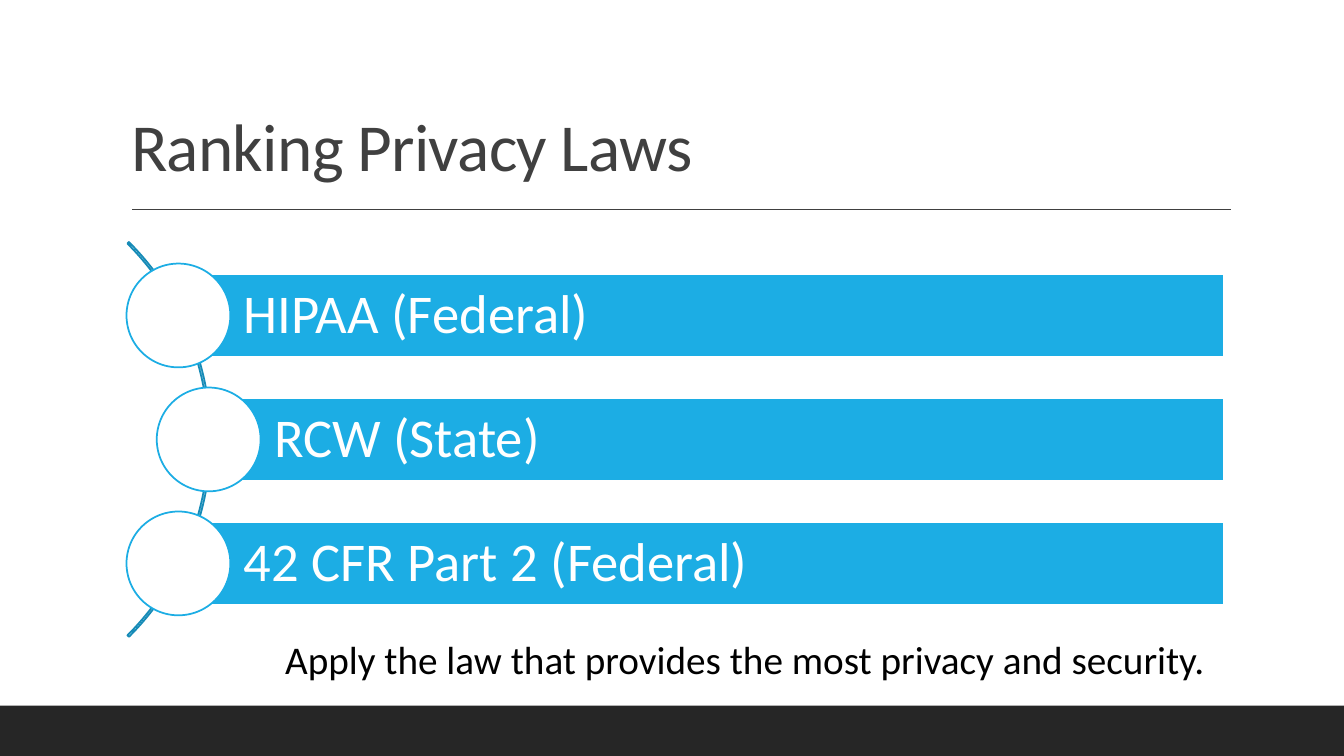
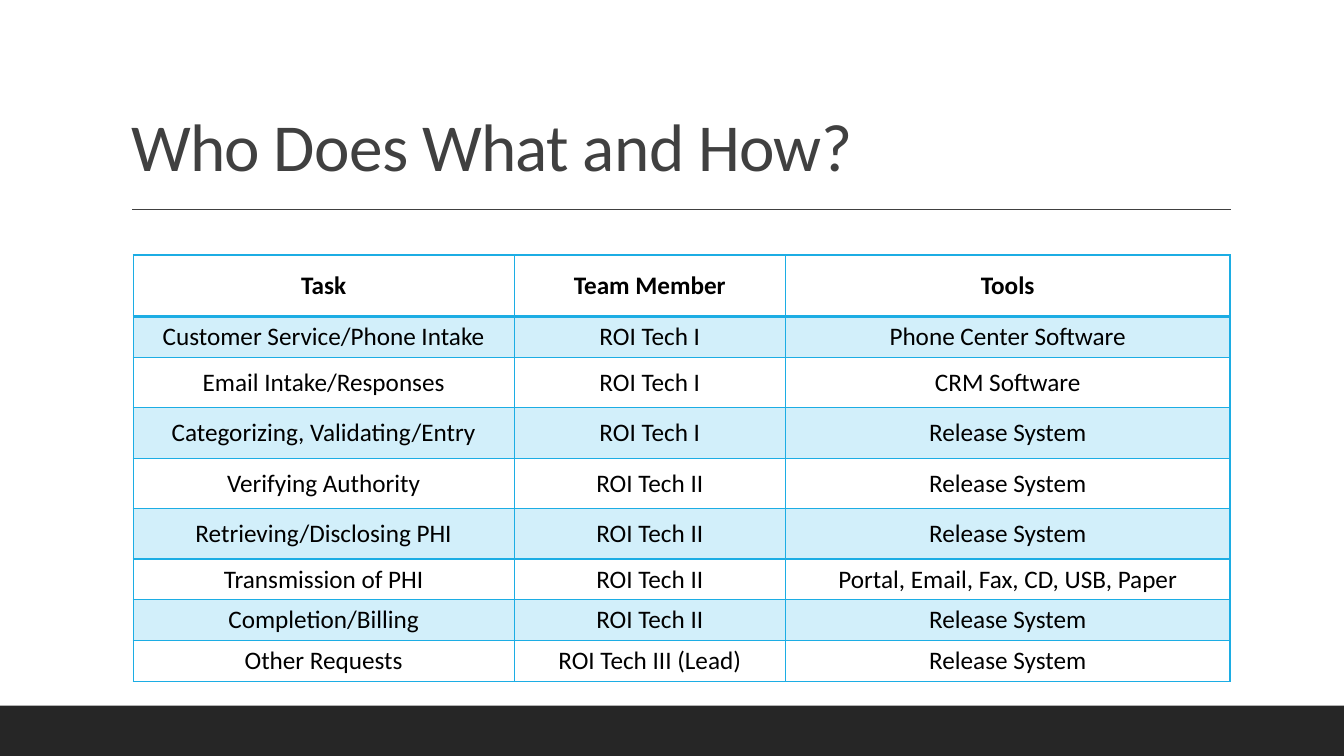
from lxml import etree
from pptx import Presentation
from pptx.dml.color import RGBColor
from pptx.enum.shapes import MSO_CONNECTOR, MSO_SHAPE
from pptx.enum.text import MSO_ANCHOR, MSO_AUTO_SIZE, PP_ALIGN
from pptx.oxml.ns import qn
from pptx.util import Inches, Pt

RECTANGLE, OVAL, ARC = MSO_SHAPE.RECTANGLE, MSO_SHAPE.OVAL, MSO_SHAPE.BLOCK_ARC
STRAIGHT = MSO_CONNECTOR.STRAIGHT
MIDDLE, BOTTOM = MSO_ANCHOR.MIDDLE, MSO_ANCHOR.BOTTOM
LEFT, CENTER = PP_ALIGN.LEFT, PP_ALIGN.CENTER
NO_AUTOFIT = MSO_AUTO_SIZE.NONE

WHITE = RGBColor(0xFF, 0xFF, 0xFF)
BLACK = RGBColor(0x00, 0x00, 0x00)
CHARCOAL = RGBColor(0x26, 0x26, 0x26)
GRAY = RGBColor(0x40, 0x40, 0x40)
BLUE = RGBColor(0x1C, 0xAD, 0xE4)
DARK_BLUE = RGBColor(0x16, 0x8B, 0xB7)
PALE_BLUE = RGBColor(0xD2, 0xEF, 0xFA)
FONT = "Calibri"

presentation = Presentation()
presentation.slide_width = Inches(13.33)
presentation.slide_height = Inches(7.5)


def write_text(text_frame, text, size, color, alignment=LEFT, bold=False):
    text_frame.text = text
    paragraph = text_frame.paragraphs[0]
    paragraph.alignment = alignment
    font = paragraph.runs[0].font
    font.name = FONT
    font.size = Pt(size)
    font.bold = bold
    font.color.rgb = color
    return paragraph


def add_titled_slide(title_text):
    slide = presentation.slides.add_slide(presentation.slide_layouts[5])

    footer_band = slide.shapes.add_shape(
        RECTANGLE, 0, Inches(7), presentation.slide_width, Inches(0.5))
    footer_band.shadow.inherit = False
    footer_band.fill.solid()
    footer_band.fill.fore_color.rgb = CHARCOAL
    footer_band.line.fill.background()

    rule = slide.shapes.add_connector(
        STRAIGHT, Inches(1.31), Inches(2.08), Inches(12.21), Inches(2.08))
    rule.line.color.rgb = GRAY
    rule.line.width = Pt(1)
    etree.SubElement(rule._element.spPr, qn("a:effectLst"))

    title = slide.shapes.title
    title.left, title.top = Inches(1.2), Inches(0.31)
    title.width, title.height = Inches(11), Inches(1.59)
    title.text_frame.auto_size = NO_AUTOFIT
    title.text_frame.vertical_anchor = BOTTOM
    paragraph = write_text(title.text_frame, title_text, 48, GRAY)
    paragraph.line_spacing = 0.9
    paragraph.runs[0]._r.get_or_add_rPr().set("spc", "-50")
    return slide


slide = add_titled_slide("Ranking Privacy Laws")

arc = slide.shapes.add_shape(
    ARC, Inches(-3.45), Inches(1.59), Inches(5.54), Inches(5.54))
arc.adjustments[0] = 189
arc.adjustments[1] = 27
arc.adjustments[2] = 0.0039
arc.shadow.inherit = False
arc.fill.background()
arc.line.color.rgb = DARK_BLUE
arc.line.width = Pt(1.25)

BAND_RIGHT, BAND_HEIGHT, CIRCLE_SIZE = 12.14, 0.82, 1.03
laws = [("HIPAA (Federal)", 1.77), ("RCW (State)", 2.07), ("42 CFR Part 2 (Federal)", 1.77)]
for index, (law, band_left) in enumerate(laws):
    band_top = 2.72 + index * 1.23
    band = slide.shapes.add_shape(
        RECTANGLE, Inches(band_left), Inches(band_top),
        Inches(BAND_RIGHT - band_left), Inches(BAND_HEIGHT))
    circle = slide.shapes.add_shape(
        OVAL, Inches(band_left - CIRCLE_SIZE / 2),
        Inches(band_top + (BAND_HEIGHT - CIRCLE_SIZE) / 2),
        Inches(CIRCLE_SIZE), Inches(CIRCLE_SIZE))
    for shape, fill_color, line_color in ((band, BLUE, WHITE), (circle, WHITE, BLUE)):
        shape.shadow.inherit = False
        shape.fill.solid()
        shape.fill.fore_color.rgb = fill_color
        shape.line.color.rgb = line_color
        shape.line.width = Pt(1.25)
    text_frame = band.text_frame
    text_frame.margin_left = Inches(0.65)
    text_frame.margin_top = text_frame.margin_right = text_frame.margin_bottom = Inches(0.11)
    text_frame.vertical_anchor = MIDDLE
    write_text(text_frame, law, 39, WHITE).line_spacing = 0.9

advice = slide.shapes.add_textbox(Inches(2.73), Inches(6.25), Inches(9.46), Inches(0.57))
advice.text_frame.word_wrap = True
write_text(advice.text_frame, "Apply the law that provides the most privacy and security.", 28, BLACK)

slide = add_titled_slide("Who Does What and How?")

rows = [
    ("Task", "Team Member", "Tools"),
    ("Customer Service/Phone Intake", "ROI Tech I", "Phone Center Software"),
    ("Email Intake/Responses", "ROI Tech I", "CRM Software"),
    ("Categorizing, Validating/Entry", "ROI Tech I", "Release System"),
    ("Verifying Authority", "ROI Tech II", "Release System"),
    ("Retrieving/Disclosing PHI", "ROI Tech II", "Release System"),
    ("Transmission of PHI", "ROI Tech II", "Portal, Email, Fax, CD, USB, Paper"),
    ("Completion/Billing", "ROI Tech II", "Release System"),
    ("Other Requests", "ROI Tech III (Lead)", "Release System"),
]
column_widths = [3.78, 2.69, 4.41]
row_heights = [0.61, 0.4, 0.5, 0.5, 0.5, 0.5, 0.4, 0.4, 0.4]

table = slide.shapes.add_table(
    len(rows), len(column_widths), Inches(1.32), Inches(2.53),
    Inches(sum(column_widths)), Inches(sum(row_heights))).table
table.first_row = False
table.horz_banding = False
for column, width in zip(table.columns, column_widths):
    column.width = Inches(width)

for row_index, (row, height) in enumerate(zip(rows, row_heights)):
    table.rows[row_index].height = Inches(height)
    for column_index, text in enumerate(row):
        cell = table.cell(row_index, column_index)
        cell.vertical_anchor = MIDDLE
        write_text(cell.text_frame, text, 18, BLACK, CENTER, bold=row_index == 0)
        cell_properties = cell._tc.get_or_add_tcPr()
        for side in ("L", "R", "T", "B"):
            thick = (row_index, side) in ((0, "B"), (1, "T"))
            border = etree.SubElement(
                cell_properties, qn(f"a:ln{side}"), w=str(Pt(2 if thick else 1)))
            border_fill = etree.SubElement(border, qn("a:solidFill"))
            etree.SubElement(border_fill, qn("a:srgbClr"), val=str(BLUE))
        if row_index % 2:
            cell.fill.solid()
            cell.fill.fore_color.rgb = PALE_BLUE
        else:
            cell.fill.background()

presentation.save("out.pptx")
